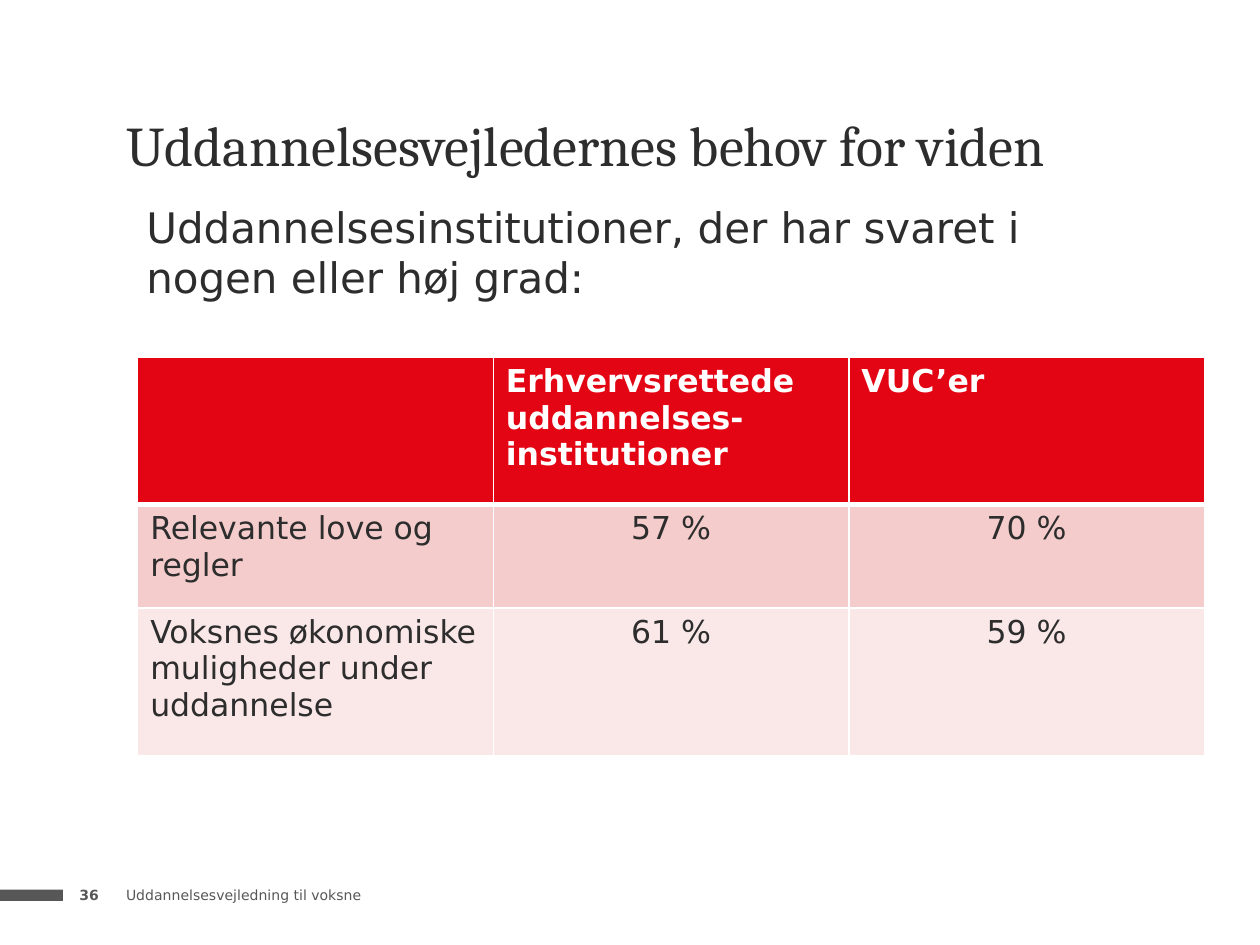
from dataclasses import dataclass
from lxml.etree import fromstring
from pptx import Presentation
from pptx.dml.color import RGBColor as RGB
from pptx.enum.shapes import MSO_SHAPE as SHAPE
from pptx.enum.text import MSO_ANCHOR as ANCHOR, MSO_AUTO_SIZE as AUTO, PP_ALIGN as ALIGN
from pptx.util import Pt


@dataclass(frozen=True)
class Theme:
    ink: str = "2D2D2D"
    grey: str = "575757"
    white: str = "FFFFFF"
    red: str = "E40514"
    bands: tuple = ("F5CCCC", "FAE7E7")
    serif: str = "Cambria"
    sans: str = "DejaVu Sans"
    title: int = 32
    lead: int = 24
    cell: int = 18
    footer: int = 8


T = Theme()
NS = "http://schemas.openxmlformats.org/drawingml/2006/main"


def write(tf, text, size, color=T.ink, font=T.sans, bold=False, align=ALIGN.LEFT,
          anchor=ANCHOR.TOP, inset=None, wrap=True):
    tf.word_wrap = wrap
    tf.vertical_anchor = anchor
    if inset is not None:
        tf.margin_left = tf.margin_right = tf.margin_top = tf.margin_bottom = Pt(inset)
    p = tf.paragraphs[0]
    p.alignment = align
    r = p.add_run()
    r.text = text
    r.font.name = font
    r.font.size = Pt(size)
    r.font.bold = bold
    r.font.color.rgb = RGB.from_string(color)


def set_borders(cell, widths):
    tcPr = cell._tc.get_or_add_tcPr()
    for i, (side, width) in enumerate(widths.items()):
        tcPr.insert(i, fromstring(
            f'<a:ln{side} xmlns:a="{NS}" w="{Pt(width)}"><a:solidFill>'
            f'<a:srgbClr val="{T.white}"/></a:solidFill></a:ln{side}>'))


prs = Presentation()
prs.slide_width, prs.slide_height = Pt(720), Pt(540)
s = prs.slides.add_slide(prs.slide_layouts[5])

bar = s.shapes.add_shape(SHAPE.RECTANGLE, Pt(0), Pt(508.3), Pt(36), Pt(6.5))
bar.shadow.inherit = False
bar.fill.solid()
bar.fill.fore_color.rgb = RGB.from_string(T.grey)
bar.line.fill.background()

title = s.shapes.title
title.left, title.top, title.width, title.height = Pt(72), Pt(30.2), Pt(630), Pt(71.3)
title.text_frame.auto_size = AUTO.NONE
write(title.text_frame, "Uddannelsesvejledernes behov for viden", T.title,
      font=T.serif, anchor=ANCHOR.BOTTOM, inset=0)

lead = s.shapes.add_textbox(Pt(76.5), Pt(111.6), Pt(528), Pt(65.5))
lead.text_frame.auto_size = AUTO.SHAPE_TO_FIT_TEXT
write(lead.text_frame, "Uddannelsesinstitutioner, der har svaret i nogen eller høj grad:", T.lead)

rows = [
    ("", "Erhvervsrettede uddannelses-institutioner", "VUC’er"),
    ("Relevante love og regler", "57 %", "70 %"),
    ("Voksnes økonomiske muligheder under uddannelse", "61 %", "59 %"),
]
heights = [84.2, 59.2, 84.2]
col_width = 203.2
table = s.shapes.add_table(len(rows), 3, Pt(78.7), Pt(204), Pt(3 * col_width), Pt(sum(heights))).table
for col in table.columns:
    col.width = Pt(col_width)
for i, (row, height) in enumerate(zip(rows, heights)):
    table.rows[i].height = Pt(height)
    header = i == 0
    for j, text in enumerate(row):
        cell = table.cell(i, j)
        cell.fill.solid()
        cell.fill.fore_color.rgb = RGB.from_string(T.red if header else T.bands[i - 1])
        set_borders(cell, {"L": 1, "R": 1, "T": 3 if i == 1 else 1, "B": 3 if header else 1})
        if text:
            write(cell.text_frame, text, T.cell, color=T.white if header else T.ink, bold=header,
                  align=ALIGN.LEFT if header or j == 0 else ALIGN.CENTER)

for left, width, text, bold in [(72, 425.5, "Uddannelsesvejledning til voksne", False),
                                (45.4, 26.6, "36", True)]:
    box = s.shapes.add_textbox(Pt(left), Pt(505.5), Pt(width), Pt(11.5))
    write(box.text_frame, text, T.footer, color=T.grey, bold=bold, anchor=ANCHOR.MIDDLE,
          inset=0, wrap=False)

prs.save("out.pptx")
